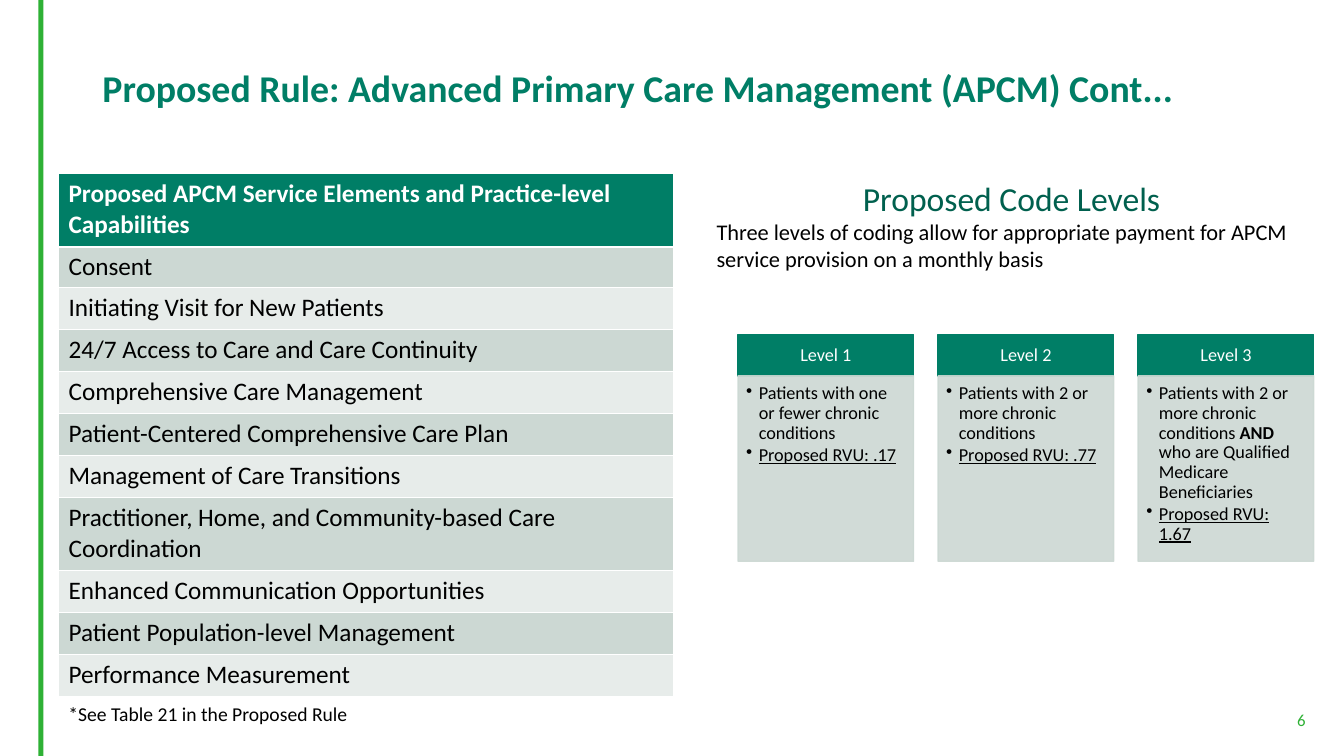
from lxml import etree
from pptx import Presentation
from pptx.dml.color import RGBColor
from pptx.enum import shapes, text
from pptx.oxml.ns import qn
from pptx.util import Pt

TITLE = "Proposed Rule: Advanced Primary Care Management (APCM) Cont..."
ELEMENTS = [
    "Proposed APCM Service Elements and Practice-level Capabilities",
    "Consent",
    "Initiating Visit for New Patients",
    "24/7 Access to Care and Care Continuity",
    "Comprehensive Care Management",
    "Patient-Centered Comprehensive Care Plan",
    "Management of Care Transitions",
    "Practitioner, Home, and Community-based Care Coordination",
    "Enhanced Communication Opportunities",
    "Patient Population-level Management",
    "Performance Measurement",
]
FOOTNOTE = "*See Table 21 in the Proposed Rule"
CODES_HEAD = "Proposed Code Levels"
CODES_TEXT = ("Three levels of coding allow for appropriate payment for APCM "
              "service provision on a monthly basis")
# Each level: heading, runs of the patient group (text, bold), RVU line
LEVELS = [
    ("Level 1", [("Patients with one or fewer chronic conditions", False)],
     "Proposed RVU: .17"),
    ("Level 2", [("Patients with 2 or more chronic conditions", False)],
     "Proposed RVU: .77"),
    ("Level 3", [("Patients with 2 or more chronic conditions ", False),
                 ("AND", True),
                 (" who are Qualified Medicare Beneficiaries", False)],
     "Proposed RVU: 1.67"),
]
PAGE = "6"

THEME = {
    "font": "Calibri",
    "green": "007E66", "dark": "00604E", "bright": "2EB135",
    "band": "CCD8D3", "pale": "E7ECEA", "black": "000000", "white": "FFFFFF",
    "title": 27, "head": 24, "table": 18, "body": 16, "note": 14,
    "card": 13, "page": 12,
}
TABLE = (41.8, 123.8, 439.2)
ROW, ROW_FIRST, ROW_TALL = 30, 28.8, 52.6
CARD_LEFT, CARD_TOP, CARD_W, CARD_PITCH = 527.2, 239, 125.4, 142.9
HEAD_H, BODY_H = 29.5, 132.5


def color(name):
    return RGBColor.from_string(THEME[name])


def apply(obj, **values):
    for name, value in values.items():
        setattr(obj, name, value)


def add_run(p, words, size, tone, **fmt):
    r = p.add_run()
    r.text = words
    apply(r.font, name=THEME["font"], size=Pt(THEME[size]), **fmt)
    r.font.color.rgb = color(tone)


def add_rect(s, box, tone, alpha=None):
    """Filled rectangle; alpha in percent applies to fill and outline."""
    sp = s.shapes.add_shape(shapes.MSO_SHAPE.RECTANGLE, *map(Pt, box))
    sp.shadow.inherit = False
    sp.fill.solid()
    sp.fill.fore_color.rgb = sp.line.color.rgb = color(tone)
    sp.line.width = Pt(1)
    if alpha:
        for clr in sp._element.spPr.iter(qn("a:srgbClr")):
            etree.SubElement(clr, qn("a:alpha"), val=str(alpha * 1000))
    return sp


def set_frame(tf, anchor, insets):
    sides = ("margin_left", "margin_top", "margin_right", "margin_bottom")
    apply(tf, word_wrap=True, vertical_anchor=anchor,
          **dict(zip(sides, map(Pt, insets))))


def add_text(s, box, anchor=text.MSO_ANCHOR.TOP):
    tf = s.shapes.add_textbox(*map(Pt, box)).text_frame
    set_frame(tf, anchor, (7.2, 3.6, 7.2, 3.6))
    return tf


def set_bullet(p):
    pPr = p._p.get_or_add_pPr()
    pPr.set("marL", str(Pt(9)))
    pPr.set("indent", str(Pt(-9)))
    etree.SubElement(pPr, qn("a:buChar"), char="•")


def add_table(s):
    heights = [ROW_TALL if len(e) > 50 else ROW for e in ELEMENTS]
    heights[1] = ROW_FIRST
    table = s.shapes.add_table(len(ELEMENTS), 1, *map(Pt, TABLE),
                               Pt(sum(heights))).table
    for i, (words, height) in enumerate(zip(ELEMENTS, heights)):
        table.rows[i].height = Pt(height)
        cell = table.cell(i, 0)
        cell.fill.solid()
        cell.fill.fore_color.rgb = color(
            "green" if i == 0 else "band" if i % 2 else "pale")
        add_run(cell.text_frame.paragraphs[0], words, "table",
                "black" if i else "white", bold=i == 0)


def add_card(s, left, head, group, rvu):
    tf = add_rect(s, (left, CARD_TOP, CARD_W, HEAD_H), "green").text_frame
    set_frame(tf, text.MSO_ANCHOR.MIDDLE, (7.2, 4.3, 7.2, 4.3))
    p = tf.paragraphs[0]
    apply(p, alignment=text.PP_ALIGN.CENTER, line_spacing=0.9)
    add_run(p, head, "card", "white")

    box = (left, CARD_TOP + HEAD_H, CARD_W, BODY_H)
    tf = add_rect(s, box, "band", 90).text_frame
    set_frame(tf, text.MSO_ANCHOR.TOP, (5.8, 5.8, 7.2, 7.9))
    group_p, rvu_p = tf.paragraphs[0], tf.add_paragraph()
    for p in (group_p, rvu_p):
        apply(p, alignment=text.PP_ALIGN.LEFT, line_spacing=0.9,
              space_after=Pt(2))
        set_bullet(p)
    for words, bold in group:
        add_run(group_p, words, "card", "black", bold=bold)
    add_run(rvu_p, rvu, "card", "black", underline=True)


def main():
    prs = Presentation()
    apply(prs, slide_width=Pt(960), slide_height=Pt(540))
    s = prs.slides.add_slide(prs.slide_layouts[5])

    rail = add_rect(s, (27.4, 0, 3.6, 540), "bright")
    rail.line.fill.background()

    title = s.shapes.title
    apply(title, left=Pt(66), top=Pt(28.8), width=Pt(828), height=Pt(72))
    tf = title.text_frame
    set_frame(tf, text.MSO_ANCHOR.MIDDLE, (7.2, 3.6, 7.2, 3.6))
    tf.auto_size = text.MSO_AUTO_SIZE.NONE
    p = tf.paragraphs[0]
    apply(p, alignment=text.PP_ALIGN.LEFT, line_spacing=0.9)
    add_run(p, TITLE, "title", "green", bold=True)

    for i, level in enumerate(LEVELS):
        add_card(s, CARD_LEFT + i * CARD_PITCH, *level)

    tf = add_text(s, (504.7, 123.8, 435.6, 75))
    p = tf.paragraphs[0]
    p.alignment = text.PP_ALIGN.CENTER
    add_run(p, CODES_HEAD, "head", "dark")
    add_run(tf.add_paragraph(), CODES_TEXT, "body", "black")

    add_table(s)
    tf = add_text(s, (41.8, 497.5, 261.4, 24.5))
    add_run(tf.paragraphs[0], FOOTNOTE, "note", "black")

    tf = add_text(s, (689, 503.3, 250.6, 21.6), text.MSO_ANCHOR.BOTTOM)
    p = tf.paragraphs[0]
    p.alignment = text.PP_ALIGN.RIGHT
    add_run(p, PAGE, "page", "bright")

    prs.save("out.pptx")


if __name__ == "__main__":
    main()
